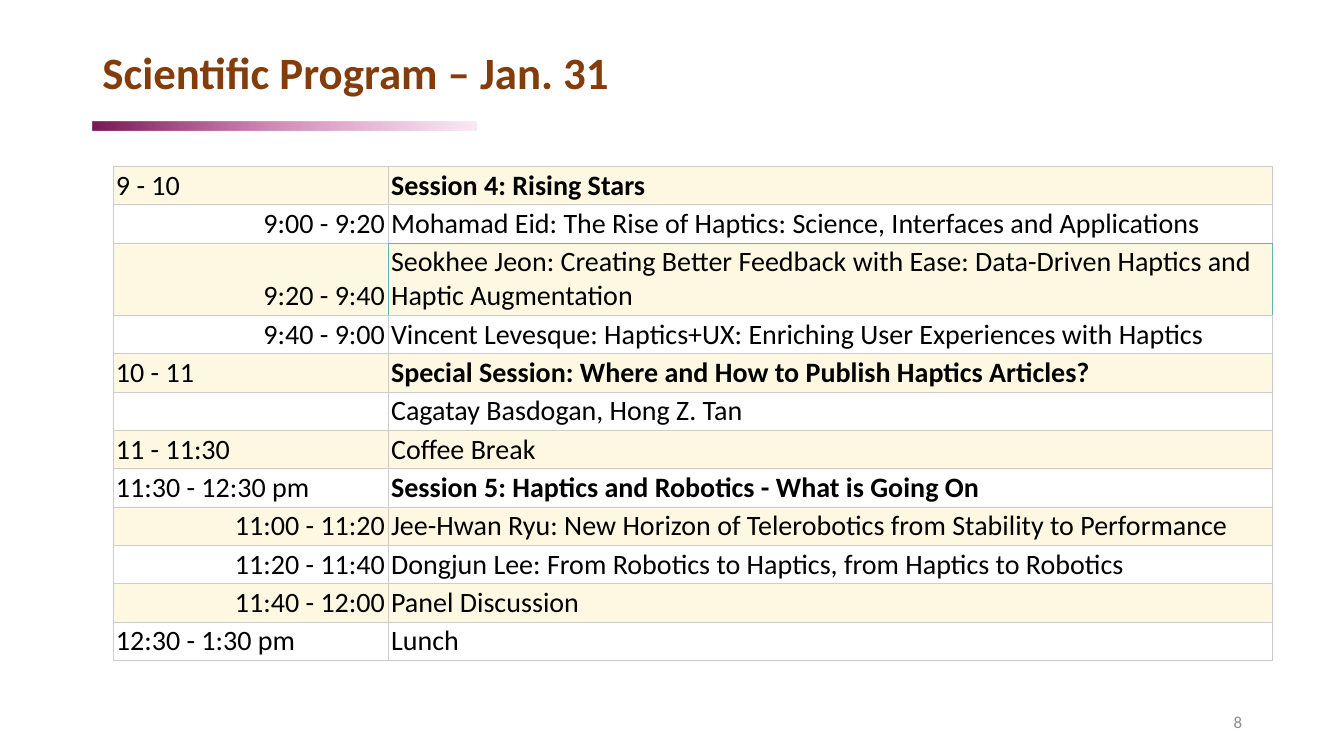
from dataclasses import dataclass
from typing import Any

import lxml.etree
import pptx
import pptx.dml.color
import pptx.enum.shapes
import pptx.enum.text
import pptx.oxml.ns
import pptx.util

qn = pptx.oxml.ns.qn
ALIGN = pptx.enum.text.PP_ALIGN
ANCHOR = pptx.enum.text.MSO_ANCHOR


@dataclass(frozen=True)
class Theme:
    font: str = "Calibri"
    title: str = "843C0B"
    text: str = "000000"
    number: str = "8C8C8C"
    bands: tuple = ("FEF8E3", "FFFFFF")
    border: str = "CCCCCC"
    highlight: str = "60B7B9"
    # Position in percent, colour, opacity in percent
    rule: tuple = ((0, "771A55", 100), (50, "A92579", 50), (100, "C82C90", 10))
    title_size: int = 32
    body_size: int = 20
    number_size: int = 12
    border_width: float = 0.6


@dataclass(frozen=True)
class Box:
    """Place on a grid of 160 columns by 90 rows."""
    col: float
    row: float
    cols: float
    rows: float


@dataclass(frozen=True)
class Slot:
    time: str
    event: str
    session: bool = False
    talk: bool = False
    lines: int = 1
    highlight: bool = False


THEME = Theme()
SLIDE_W, SLIDE_H = pptx.util.Inches(13.33), pptx.util.Inches(7.5)
TITLE = Box(11, 4.8, 138, 8.16)
RULE = Box(11, 14.5, 45.75, 1)
TABLE = Box(13.45, 19.8, 138, 58)
NUMBER = Box(135.6, 83.5, 13.45, 4.8)
COLUMNS = (32.75, 105.25)
ROW_HEIGHTS = {1: 4.5, 2: 8.5}

PROGRAM = (
    Slot("9 - 10", "Session 4: Rising Stars", session=True),
    Slot("9:00 - 9:20", "Mohamad Eid: The Rise of Haptics: Science, Interfaces and Applications", talk=True),
    Slot("9:20 - 9:40", "Seokhee Jeon: Creating Better Feedback with Ease: Data-Driven Haptics and "
         "Haptic Augmentation", talk=True, lines=2, highlight=True),
    Slot("9:40 - 9:00", "Vincent Levesque: Haptics+UX: Enriching User Experiences with Haptics", talk=True),
    Slot("10 - 11", "Special Session: Where and How to Publish Haptics Articles?", session=True),
    Slot("", "Cagatay Basdogan, Hong Z. Tan"),
    Slot("11 - 11:30", "Coffee Break"),
    Slot("11:30 - 12:30 pm", "Session 5: Haptics and Robotics - What is Going On", session=True),
    Slot("11:00 - 11:20", "Jee-Hwan Ryu: New Horizon of Telerobotics from Stability to Performance", talk=True),
    Slot("11:20 - 11:40", "Dongjun Lee: From Robotics to Haptics, from Haptics to Robotics", talk=True),
    Slot("11:40 - 12:00", "Panel Discussion", talk=True),
    Slot("12:30 - 1:30 pm", "Lunch"),
)


def x(cols: float) -> int:
    return round(SLIDE_W * cols / 160)


def y(rows: float) -> int:
    return round(SLIDE_H * rows / 90)


def place(box: Box) -> tuple[int, int, int, int]:
    return x(box.col), y(box.row), x(box.cols), y(box.rows)


def rgb(color: str) -> pptx.dml.color.RGBColor:
    return pptx.dml.color.RGBColor.from_string(color)


def write(tf: Any, text: str, size: int, color: str, bold: bool = False,
          align: Any = ALIGN.LEFT) -> None:
    tf.text = text
    p = tf.paragraphs[0]
    p.alignment = align
    for item in (p, *p.runs):
        font = item.font
        font.name, font.size, font.bold = THEME.font, pptx.util.Pt(size), bold
        font.color.rgb = rgb(color)


def add_title(s: Any) -> None:
    sp = s.shapes.title
    sp.left, sp.top, sp.width, sp.height = place(TITLE)
    tf = sp.text_frame
    tf.vertical_anchor = ANCHOR.MIDDLE
    write(tf, "Scientific Program – Jan. 31", THEME.title_size, THEME.title, bold=True)
    tf.paragraphs[0].line_spacing = 0.9


def add_rule(s: Any) -> None:
    sp = s.shapes.add_shape(pptx.enum.shapes.MSO_SHAPE.RECTANGLE, *place(RULE))
    sp.shadow.inherit = False
    sp.line.fill.background()
    sp.fill.gradient()
    sp.fill.gradient_angle = 0
    stops = sp._element.spPr.find(".//" + qn("a:gsLst"))
    for old in list(stops):
        stops.remove(old)
    for position, color, opacity in THEME.rule:
        stop = lxml.etree.SubElement(stops, qn("a:gs"), pos=str(position * 1000))
        clr = lxml.etree.SubElement(stop, qn("a:srgbClr"), val=color)
        lxml.etree.SubElement(clr, qn("a:alpha"), val=str(opacity * 1000))


def border_color(row: int, col: int, side: str) -> str:
    """Highlight the left, top and right edges of a marked event, seen from either cell."""
    marked = PROGRAM[row].highlight
    above_marked = row + 1 < len(PROGRAM) and PROGRAM[row + 1].highlight
    lit = (marked and (col == 1 and side in "LTR" or col == 0 and side == "R")
           or above_marked and col == 1 and side == "B")
    return THEME.highlight if lit else THEME.border


def format_cell(cell: Any, row: int, col: int) -> None:
    slot = PROGRAM[row]
    align = ALIGN.RIGHT if slot.talk and col == 0 else ALIGN.LEFT
    write(cell.text_frame, (slot.time, slot.event)[col], THEME.body_size, THEME.text,
          bold=slot.session and col == 1, align=align)
    cell.vertical_anchor = ANCHOR.BOTTOM
    cell.margin_left = cell.margin_right = pptx.util.Inches(0.03)
    cell.margin_top = cell.margin_bottom = pptx.util.Inches(0.02)
    tc_pr = cell._tc.get_or_add_tcPr()
    for side in "LRTB":
        ln = lxml.etree.SubElement(tc_pr, qn(f"a:ln{side}"), w=str(pptx.util.Pt(THEME.border_width)))
        fill = lxml.etree.SubElement(ln, qn("a:solidFill"))
        lxml.etree.SubElement(fill, qn("a:srgbClr"), val=border_color(row, col, side))
    cell.fill.solid()
    cell.fill.fore_color.rgb = rgb(THEME.bands[row % 2])


def add_program(s: Any) -> None:
    table = s.shapes.add_table(len(PROGRAM), len(COLUMNS), *place(TABLE)).table
    table.first_row = table.horz_banding = False
    for column, width in zip(table.columns, COLUMNS):
        column.width = x(width)
    for row, slot in enumerate(PROGRAM):
        table.rows[row].height = y(ROW_HEIGHTS[slot.lines])
        for col in range(len(COLUMNS)):
            format_cell(table.cell(row, col), row, col)


def add_number(s: Any) -> None:
    tf = s.shapes.add_textbox(*place(NUMBER)).text_frame
    tf.word_wrap = True
    tf.vertical_anchor = ANCHOR.MIDDLE
    write(tf, "8", THEME.number_size, THEME.number, align=ALIGN.RIGHT)


def main() -> None:
    prs = pptx.Presentation()
    prs.slide_width, prs.slide_height = SLIDE_W, SLIDE_H
    s = prs.slides.add_slide(prs.slide_layouts[5])
    # Heading
    add_title(s)
    add_rule(s)
    # Timetable
    add_program(s)
    # Footer
    add_number(s)
    prs.save("out.pptx")


if __name__ == "__main__":
    main()
